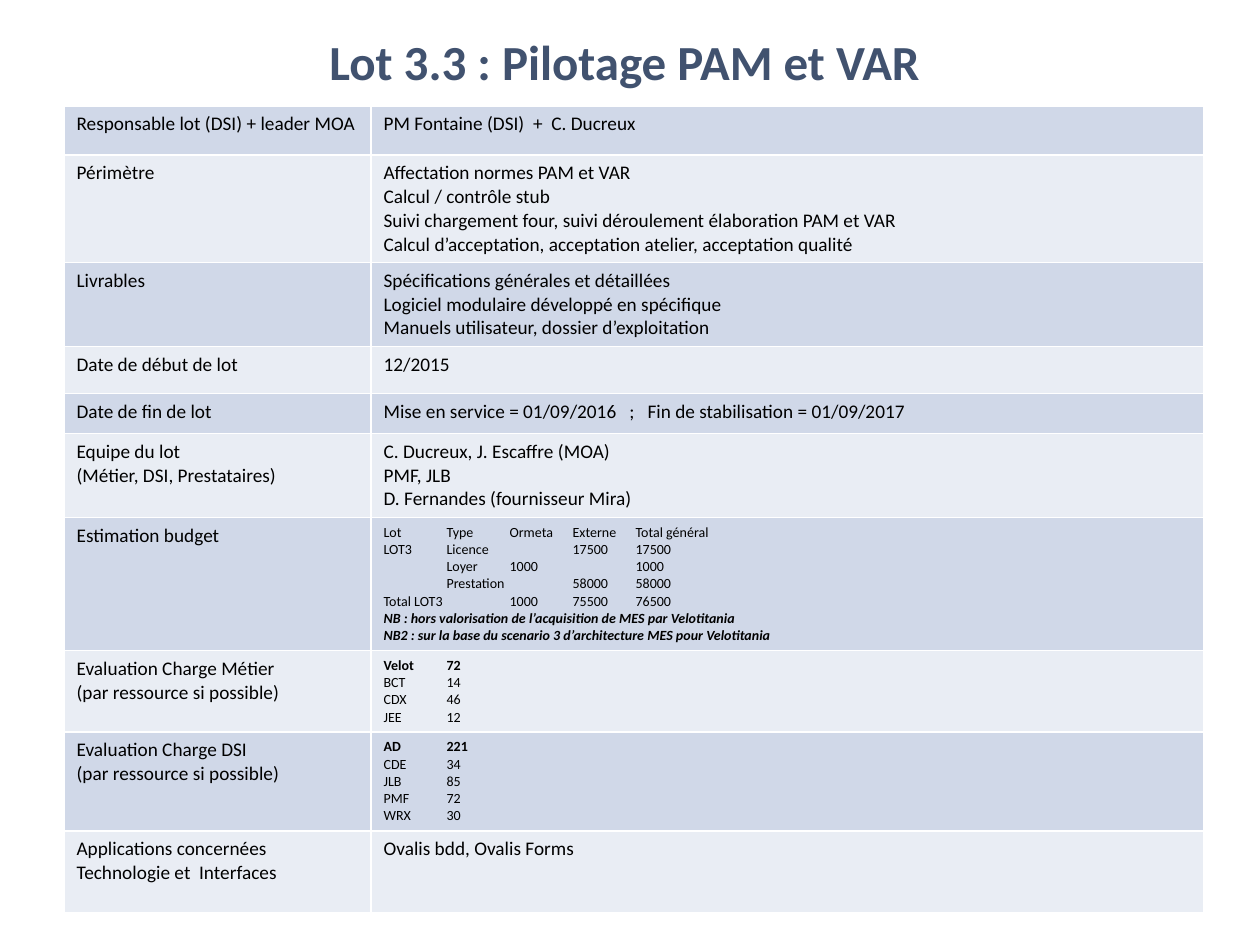
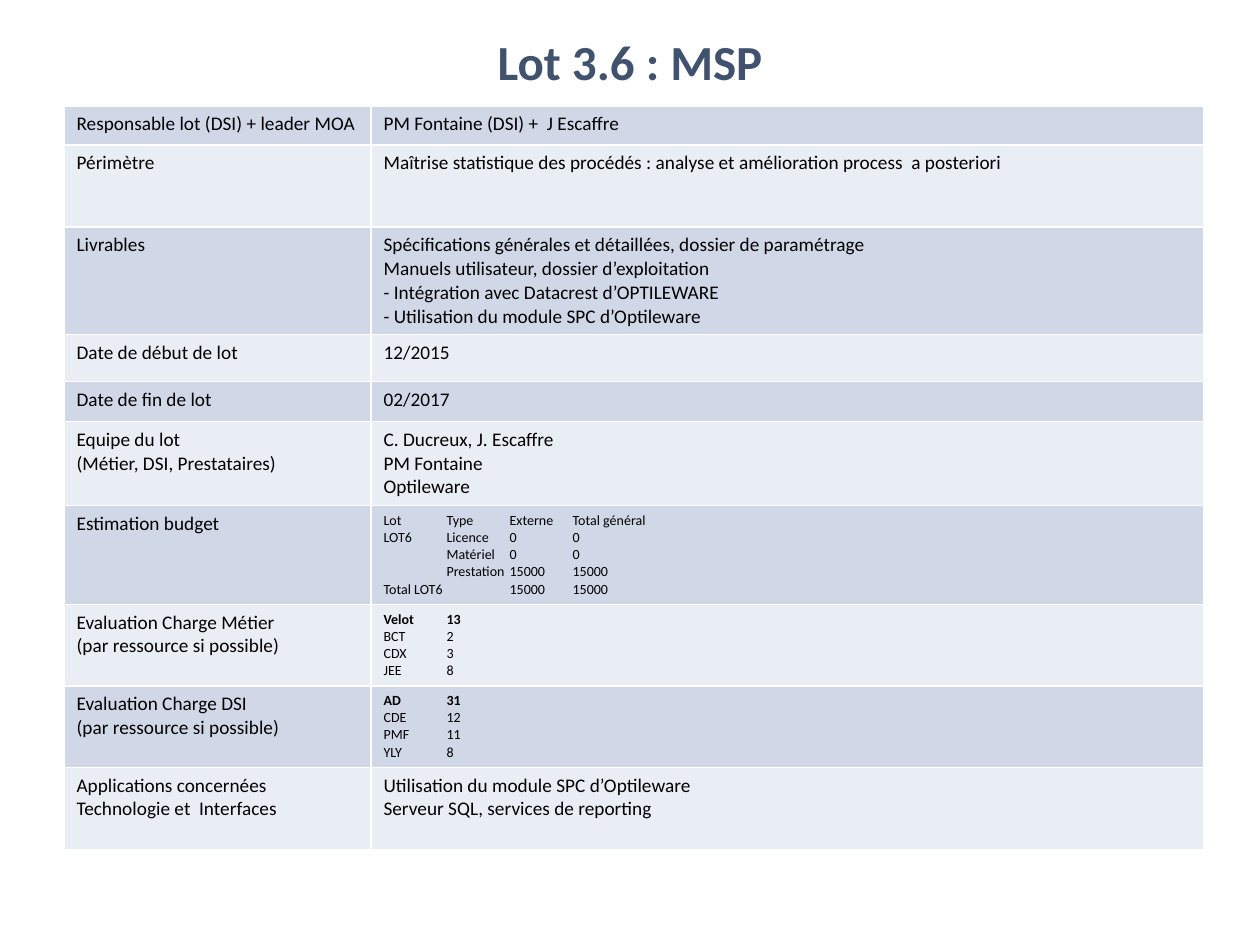
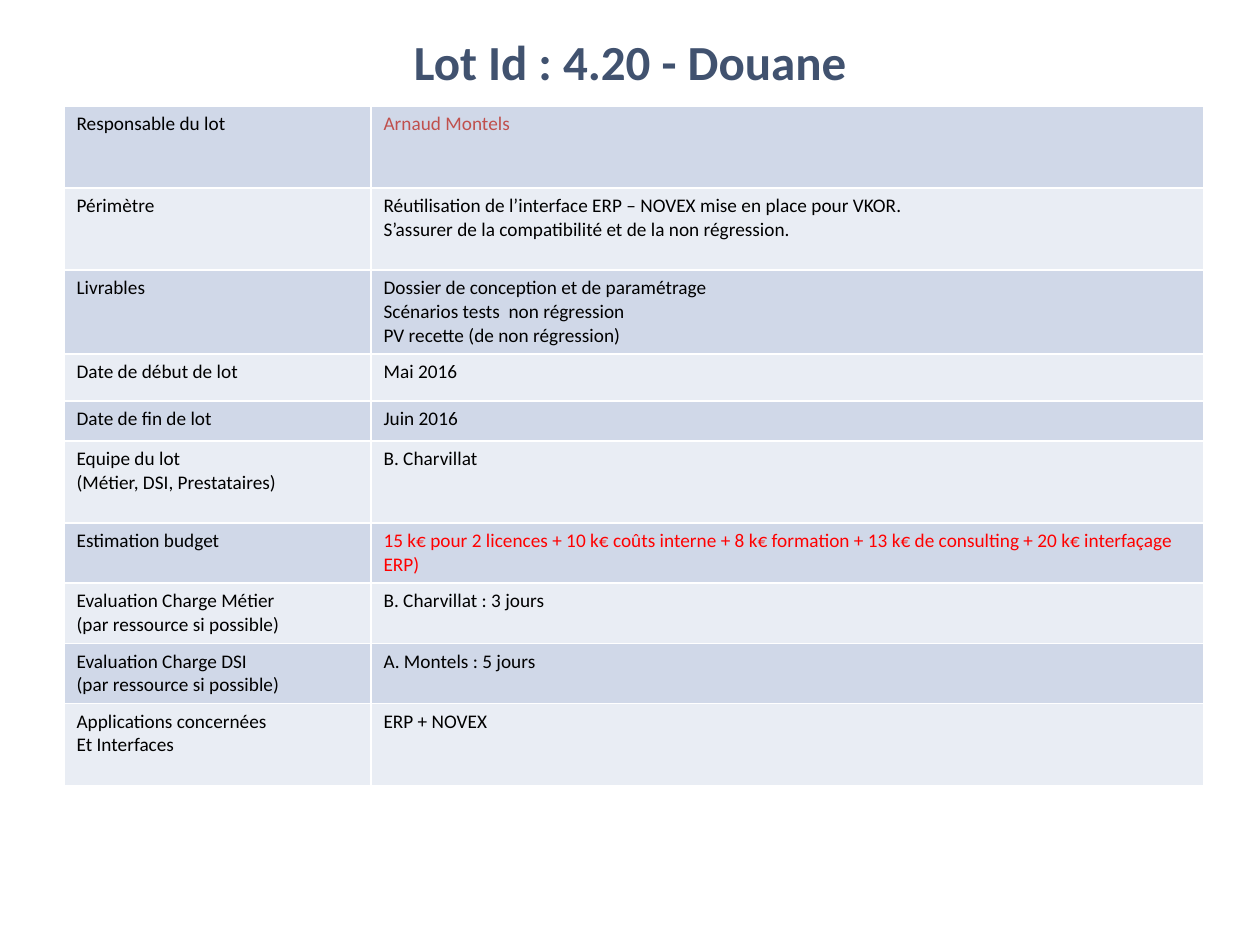
from dataclasses import dataclass

from lxml.etree import SubElement
from pptx import Presentation
from pptx.dml.color import RGBColor
from pptx.enum.text import MSO_ANCHOR, MSO_AUTO_SIZE, PP_ALIGN
from pptx.oxml.ns import qn
from pptx.util import Emu, Pt

PX_PER_INCH = 126
TITLE_ONLY = 5


@dataclass(frozen=True)
class Theme:
    font: str = "Calibri"
    title: str = "41526F"
    text: str = "000000"
    accent: str = "C0504D"
    alert: str = "FF0000"
    border: str = "FFFFFF"
    bands: tuple = ("D0D8E8", "E9EDF4")
    title_size: int = 28
    body_size: int = 11
    figure_size: int = 8
    border_width: int = 1


THEME = Theme()


@dataclass(frozen=True)
class Line:
    text: str
    size: int = THEME.body_size
    color: str = THEME.text
    bold: bool = False
    italic: bool = False


# Page geometry, in px
PAGE_SIZE = (1260, 945)
TITLE_BOX = (63, 16, 1134, 90)
TABLE_LEFT, TABLE_TOP = 64, 106
COLUMN_WIDTHS = (307, 833)


def px(length):
    return Emu(round(length * 914400 / PX_PER_INCH))


# Kinds of cell content
def body(*texts, color=THEME.text):
    return [Line(text, color=color) for text in texts]


def figures(*rows):
    """Small figures, one row per line, set in columns by tabs."""
    return [Line("\t".join(row), THEME.figure_size) for row in rows]


def remarks(*texts):
    return [Line(text, THEME.figure_size, bold=True, italic=True) for text in texts]


def workload(team, total, **people):
    heading = Line(f"{team}\t{total}", THEME.figure_size, bold=True)
    return [heading, *figures(*((name, str(days)) for name, days in people.items()))]


# Drawing
def add_span(para, line):
    span = para.add_run()
    span.text = line.text
    font = span.font
    font.name = THEME.font
    font.size = Pt(line.size)
    font.bold = line.bold
    font.italic = line.italic
    font.color.rgb = RGBColor.from_string(line.color)


def fill_text(frame, lines):
    for index, line in enumerate(lines):
        para = frame.add_paragraph() if index else frame.paragraphs[0]
        add_span(para, line)


def add_borders(cell):
    properties = cell._tc.get_or_add_tcPr()
    for side in ("lnL", "lnR", "lnT", "lnB"):
        edge = SubElement(properties, qn(f"a:{side}"), w=str(Pt(THEME.border_width)))
        paint = SubElement(edge, qn("a:solidFill"))
        SubElement(paint, qn("a:srgbClr"), val=THEME.border)


def set_title(page, text):
    box = page.shapes.title
    box.left, box.top, box.width, box.height = map(px, TITLE_BOX)
    frame = box.text_frame
    frame.word_wrap = True
    frame.auto_size = MSO_AUTO_SIZE.NONE
    frame.vertical_anchor = MSO_ANCHOR.MIDDLE
    frame.paragraphs[0].alignment = PP_ALIGN.CENTER
    fill_text(frame, [Line(text, THEME.title_size, THEME.title, bold=True)])


def add_lot_table(page, labels, contents, heights):
    table = page.shapes.add_table(
        len(labels), len(COLUMN_WIDTHS), px(TABLE_LEFT), px(TABLE_TOP),
        px(sum(COLUMN_WIDTHS)), px(sum(heights))).table
    table.first_row = table.horz_banding = False
    for column, width in zip(table.columns, COLUMN_WIDTHS):
        column.width = px(width)
    for index, row in enumerate(table.rows):
        row.height = px(heights[index])
        band = THEME.bands[index % len(THEME.bands)]
        for cell, lines in zip(row.cells, (body(*labels[index]), contents[index])):
            add_borders(cell)
            cell.fill.solid()
            cell.fill.fore_color.rgb = RGBColor.from_string(band)
            fill_text(cell.text_frame, lines)


def add_lot_page(deck, title, owner_label, interface_label, contents, heights):
    page = deck.slides.add_slide(deck.slide_layouts[TITLE_ONLY])
    set_title(page, title)
    labels = [(owner_label,), *COMMON_LABELS, ("Applications concernées", interface_label)]
    add_lot_table(page, labels, contents, heights)


# Wording shared by the lots
COMMON_LABELS = [
    ("Périmètre",),
    ("Livrables",),
    ("Date de début de lot",),
    ("Date de fin de lot",),
    ("Equipe du lot", "(Métier, DSI, Prestataires)"),
    ("Estimation budget",),
    ("Evaluation Charge Métier", "(par ressource si possible)"),
    ("Evaluation Charge DSI", "(par ressource si possible)"),
]
JOINT_OWNER = "Responsable lot (DSI) + leader MOA"
TECHNOLOGY = "Technologie et  Interfaces"

# Content of each lot, in the order of the labels
PILOTAGE = [
    body("PM Fontaine (DSI)  +  C. Ducreux"),
    body("Affectation normes PAM et VAR",
         "Calcul / contrôle stub",
         "Suivi chargement four, suivi déroulement élaboration PAM et VAR",
         "Calcul d’acceptation, acceptation atelier, acceptation qualité"),
    body("Spécifications générales et détaillées",
         "Logiciel modulaire développé en spécifique",
         "Manuels utilisateur, dossier d’exploitation"),
    body("12/2015"),
    body("Mise en service = 01/09/2016   ;   Fin de stabilisation = 01/09/2017"),
    body("C. Ducreux, J. Escaffre (MOA)", "PMF, JLB", "D. Fernandes (fournisseur Mira)"),
    figures(("Lot", "Type", "Ormeta", "Externe", "Total général"),
            ("LOT3", "Licence", "", "17500", "17500"),
            ("", "Loyer", "1000", "", "1000"),
            ("", "Prestation", "", "58000", "58000"),
            ("Total LOT3", "", "1000", "75500", "76500"))
    + remarks("NB : hors valorisation de l’acquisition de MES par Velotitania",
              "NB2 : sur la base du scenario 3 d’architecture MES pour Velotitania"),
    workload("Velot", 72, BCT=14, CDX=46, JEE=12),
    workload("AD", 221, CDE=34, JLB=85, PMF=72, WRX=30),
    body("Ovalis bdd, Ovalis Forms"),
]

MSP = [
    body("PM Fontaine (DSI) +  J Escaffre"),
    body("Maîtrise statistique des procédés : analyse et amélioration process  a posteriori"),
    body("Spécifications générales et détaillées, dossier de paramétrage",
         "Manuels utilisateur, dossier d’exploitation",
         "- Intégration avec Datacrest d’OPTILEWARE",
         "- Utilisation du module SPC d’Optileware"),
    body("12/2015"),
    body("02/2017"),
    body("C. Ducreux, J. Escaffre", "PM Fontaine", "Optileware"),
    figures(("Lot", "Type", "Externe", "Total général"),
            ("LOT6", "Licence", "0", "0"),
            ("", "Matériel", "0", "0"),
            ("", "Prestation", "15000", "15000"),
            ("Total LOT6", "", "15000", "15000")),
    workload("Velot", 13, BCT=2, CDX=3, JEE=8),
    workload("AD", 31, CDE=12, PMF=11, YLY=8),
    body("Utilisation du module SPC d’Optileware", "Serveur SQL, services de reporting"),
]

DOUANE = [
    body("Arnaud Montels", color=THEME.accent),
    body("Réutilisation de l’interface ERP – NOVEX mise en place pour VKOR.",
         "S’assurer de la compatibilité et de la non régression."),
    body("Dossier de conception et de paramétrage",
         "Scénarios tests  non régression",
         "PV recette (de non régression)"),
    body("Mai 2016"),
    body("Juin 2016"),
    body("B. Charvillat"),
    body("15 k€ pour 2 licences + 10 k€ coûts interne + 8 k€ formation"
         " + 13 k€ de consulting + 20 k€ interfaçage ERP)", color=THEME.alert),
    body("B. Charvillat : 3 jours"),
    body("A. Montels : 5 jours"),
    body("ERP + NOVEX"),
]


def main():
    deck = Presentation()
    deck.slide_width, deck.slide_height = map(px, PAGE_SIZE)
    add_lot_page(deck, "Lot 3.3 : Pilotage PAM et VAR ", JOINT_OWNER, TECHNOLOGY, PILOTAGE,
                 (49, 82, 82, 47, 40, 82, 82, 69, 69, 82))
    add_lot_page(deck, "Lot 3.6 : MSP", JOINT_OWNER, TECHNOLOGY, MSP,
                 (39, 82, 82, 47, 40, 82, 82, 69, 69, 82))
    add_lot_page(deck, "Lot Id : 4.20 - Douane", "Responsable du lot", "Et Interfaces", DOUANE,
                 (82, 82, 48, 47, 40, 82, 57, 57, 58, 82))
    deck.save("out.pptx")


if __name__ == "__main__":
    main()
